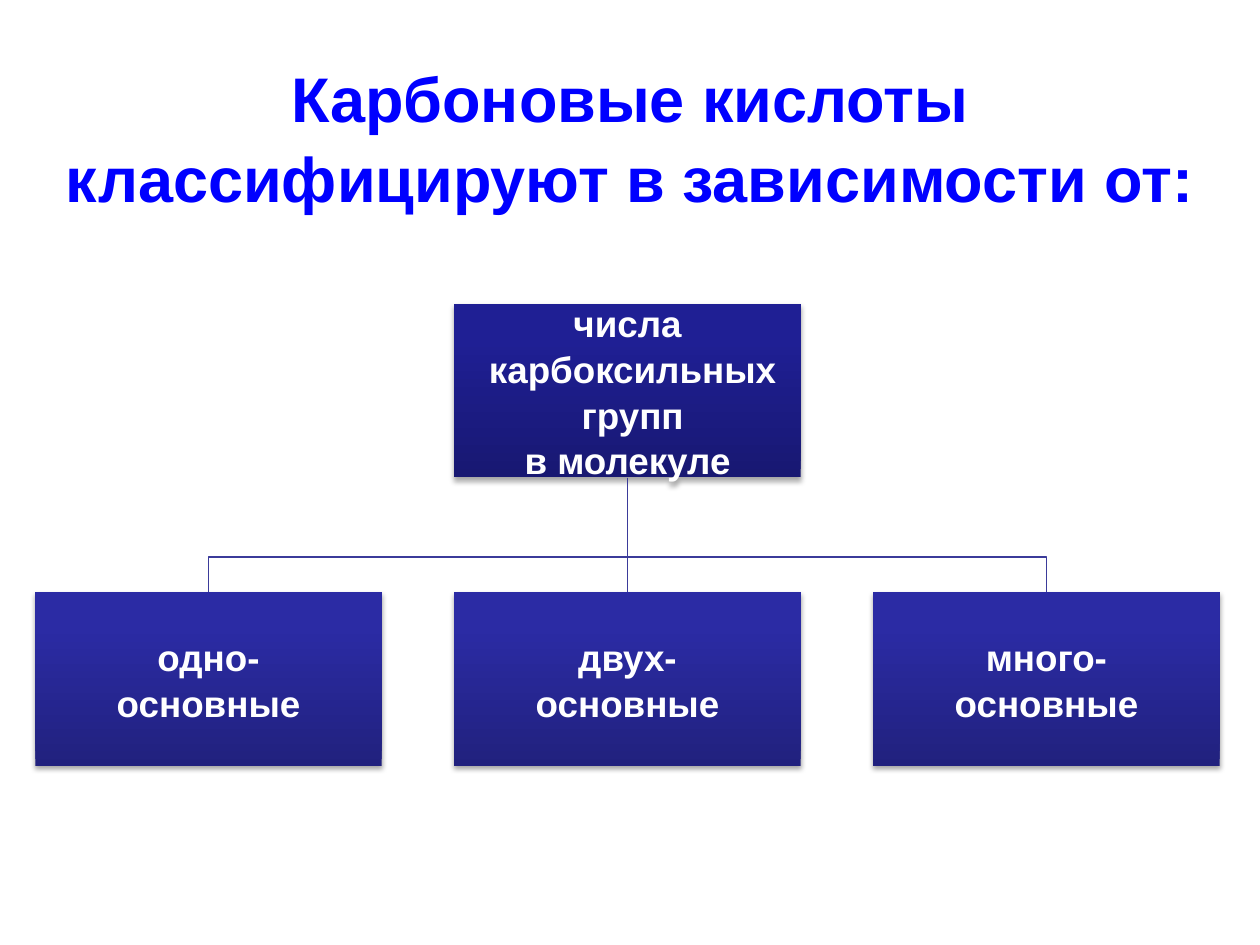
"""Build a slide that classifies carboxylic acids by their number of carboxyl groups."""
import copy

import pptx
import pptx.dml.color
import pptx.enum.dml
import pptx.enum.shapes
import pptx.enum.text
import pptx.oxml
import pptx.oxml.ns
import pptx.util

IN = pptx.util.Inches
SHADOW = (
    '<a:effectLst xmlns:a="http://schemas.openxmlformats.org/drawingml/2006/main">'
    '<a:outerShdw blurRad="39370" dist="22860" dir="5400000" rotWithShape="0">'
    '<a:srgbClr val="000000"><a:alpha val="35000"/></a:srgbClr>'
    '</a:outerShdw></a:effectLst>'
)


def rgb(value):
    return pptx.dml.color.RGBColor.from_string(value)


def write(sp, text, size=21, color="FFFFFF", inset=0.01, spacing=1.04):
    tf = sp.text_frame
    tf.word_wrap = True
    tf.vertical_anchor = pptx.enum.text.MSO_ANCHOR.MIDDLE
    tf.margin_left = tf.margin_right = tf.margin_top = tf.margin_bottom = IN(inset)
    for i, line in enumerate(text.split("\n")):
        p = tf.paragraphs[0] if i == 0 else tf.add_paragraph()
        p.alignment = pptx.enum.text.PP_ALIGN.CENTER
        p.line_spacing = spacing
        r = p.add_run()
        r.text = line
        r.font.name = "Arial"
        r.font.size = pptx.util.Pt(size)
        r.font.bold = True
        r.font.color.rgb = rgb(color)


prs = pptx.Presentation()
prs.slide_width, prs.slide_height = IN(10), IN(7.5)
s = prs.slides.add_slide(prs.slide_layouts[6])

title = s.shapes.add_textbox(0, IN(0.32), prs.slide_width, IN(1.51))
write(title, "Карбоновые кислоты классифицируют в зависимости от:",
      size=36, color="0000FF", inset=0.15, spacing=1.05)

left, pitch, box_w, box_h = 0.28, 3.325, 2.75, 1.38
root_top, bend, child_top = 2.41, 4.42, 4.7
root_grad = ("181872", "1F1F94", "1D1D97")
child_grad = ("21217E", "2B2BA4", "2929A7")
nodes = [
    (1, root_top, root_grad, "числа\n карбоксильных\n групп\nв молекуле"),
    (0, child_top, child_grad, "одно-\nосновные"),
    (1, child_top, child_grad, "двух-\nосновные"),
    (2, child_top, child_grad, "много-\nосновные"),
]

boxes = []
for col, top, grad, text in nodes:
    sp = s.shapes.add_shape(pptx.enum.shapes.MSO_SHAPE.RECTANGLE,
                            IN(left + col * pitch), IN(top), IN(box_w), IN(box_h))
    sp.line.fill.background()
    sp.fill.gradient()
    sp.fill.gradient_angle = 90
    stops = sp._element.spPr.find(".//" + pptx.oxml.ns.qn("a:gsLst"))
    stops.append(copy.deepcopy(stops[0]))
    for stop, position, color in zip(sp.fill.gradient_stops, (0, 0.8, 1), grad):
        stop.position = position
        stop.color.rgb = rgb(color)
    sp._element.spPr.append(pptx.oxml.parse_xml(SHADOW))
    write(sp, text)
    boxes.append(sp)

root, first, middle, last = boxes
root_x, root_bottom = left + pitch + box_w / 2, root_top + box_h
links = []
for side in (-1, 1):
    x = root_x + side * pitch
    fb = s.shapes.build_freeform(IN(root_x), IN(root_bottom))
    fb.add_line_segments([(IN(root_x), IN(bend)), (IN(x), IN(bend)),
                          (IN(x), IN(child_top))], close=False)
    elbow = fb.convert_to_shape()
    elbow.fill.background()
    elbow.shadow.inherit = False
    links.append(elbow)

stem = s.shapes.add_connector(pptx.enum.shapes.MSO_CONNECTOR.STRAIGHT,
                              IN(root_x), IN(root_bottom), IN(root_x), IN(child_top))
stem.begin_connect(root, 2)
stem.end_connect(middle, 0)
stem._element.spPr.get_or_add_ln()
stem._element.spPr.append(pptx.oxml.parse_xml(
    '<a:effectLst xmlns:a="http://schemas.openxmlformats.org/drawingml/2006/main"/>'))
links.append(stem)

for link in links:
    link.line.color.rgb = rgb("3B3B9A")
    link.line.width = pptx.util.Pt(0.75)

prs.save("out.pptx")
